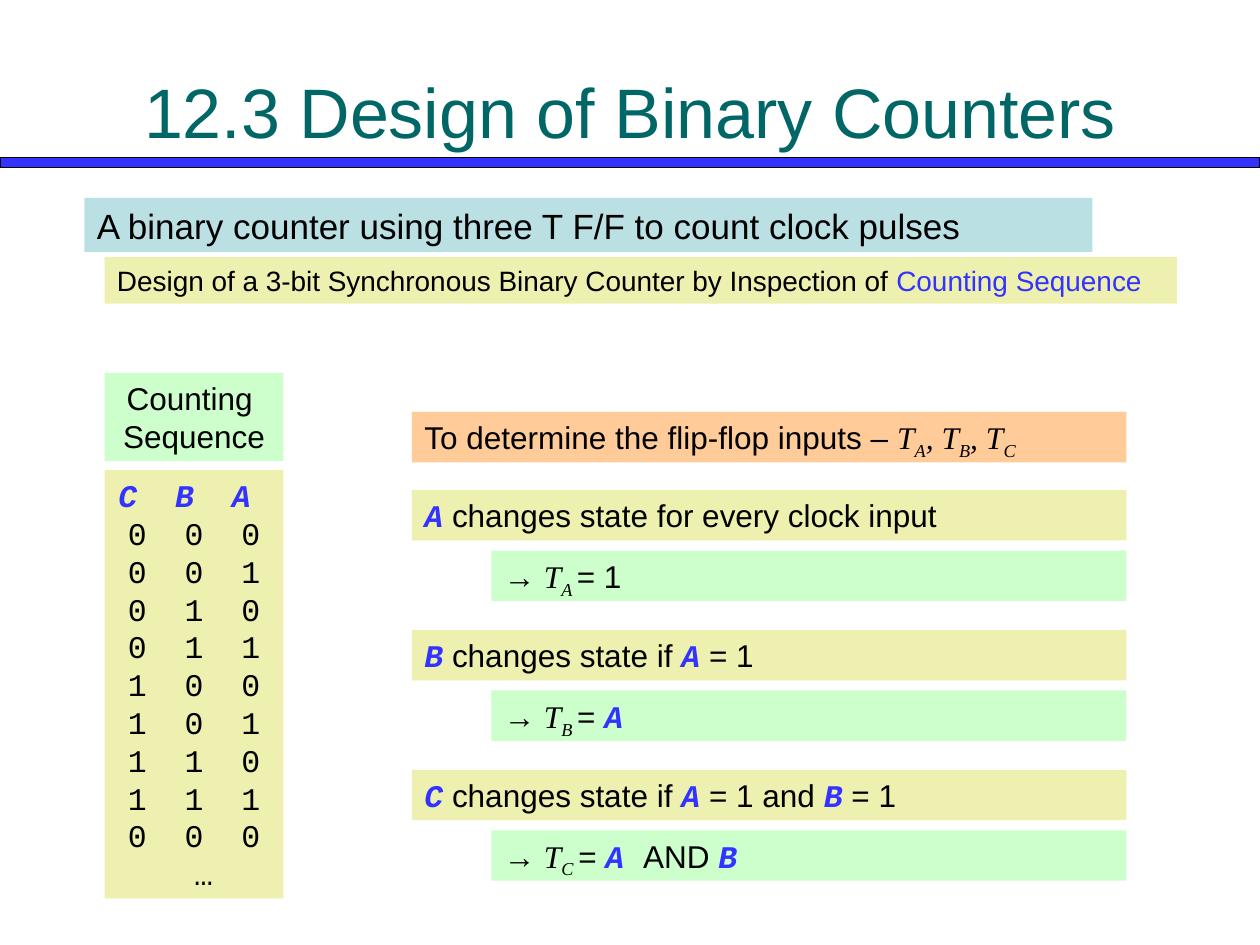
"""Build the slide on designing a 3-bit binary counter."""
from pptx import Presentation
from pptx.dml.color import RGBColor
from pptx.enum.shapes import MSO_SHAPE
from pptx.enum.text import MSO_ANCHOR, PP_ALIGN
from pptx.util import Inches, Pt

COLORS = {
    "black": "000000", "blue": "3333FF", "teal": "006666", "sky": "BBE0E3",
    "yellow": "EDF0AE", "green": "CCFFCC", "orange": "FFCC99",
}
STYLES = {
    "plain": {"name": "Arial"},
    "title": {"name": "Arial", "color": "teal"},
    "accent": {"name": "Arial", "color": "blue"},
    "state": {"name": "Courier New", "color": "blue", "bold": True, "italic": True},
    "state_wide": {"name": "Courier New", "color": "blue", "bold": True,
                   "italic": True, "spc": "540"},
    "bit": {"name": "Courier New"},
    "bit_wide": {"name": "Courier New", "spc": "540"},
    "math": {"name": "Times New Roman", "italic": True},
    "sub": {"name": "Times New Roman", "italic": True, "baseline": "-25000"},
}
XML_KEYS = ("spc", "baseline")
RULE_LEFT, RULE_TOP, RULE_STEP = 3.27, 3.89, 1.11
RESULT_LEFT, RESULT_DROP = 3.9, 0.48
RIGHT_EDGE, BOX_HEIGHT = 8.94, 0.4


def color(name):
    return RGBColor.from_string(COLORS[name])


def add_run(paragraph, style, text, size):
    run = paragraph.add_run()
    run.text = text
    run.font.size = Pt(size)
    values = {"color": "black", **STYLES[style]}
    run.font.color.rgb = color(values.pop("color"))
    for key, value in values.items():
        if key in XML_KEYS:
            run.font._element.set(key, value)
        else:
            setattr(run.font, key, value)


def write(shape, lines, size, align, anchor=MSO_ANCHOR.TOP):
    frame = shape.text_frame
    frame.word_wrap = True
    frame.vertical_anchor = anchor
    for index, runs in enumerate(lines):
        paragraph = frame.add_paragraph() if index else frame.paragraphs[0]
        paragraph.alignment = align
        for style, text in runs:
            add_run(paragraph, style, text, size)


def add_bar(slide, place, fill):
    shape = slide.shapes.add_shape(MSO_SHAPE.RECTANGLE, *map(Inches, place))
    shape.shadow.inherit = False
    shape.fill.solid()
    shape.fill.fore_color.rgb = color(fill)
    shape.line.fill.background()
    return shape


def add_box(slide, place, fill, lines, size=18, align=PP_ALIGN.LEFT):
    write(add_bar(slide, place, fill), lines, size, align)


def add_header(slide):
    bar = add_bar(slide, (0, 1.25, 10, 0.08), "blue")
    bar.line.color.rgb = color("black")
    bar.line.width = Pt(0.75)
    title = slide.shapes.add_textbox(*map(Inches, (0.5, 0.25, 9, 1.25)))
    write(title, [[("title", "12.3 Design of Binary Counters")]], 40,
          PP_ALIGN.CENTER, MSO_ANCHOR.MIDDLE)
    add_box(slide, (0.67, 1.57, 8, 0.43), "sky",
            [[("plain", "A binary counter using three T F/F to count clock pulses")]], 20)
    add_box(slide, (0.83, 2.04, 8.51, 0.37), "yellow",
            [[("plain", "Design of a 3-bit Synchronous Binary Counter by Inspection of "),
              ("accent", "Counting Sequence")]], 16)


def add_sequence(slide):
    rows = [[("state_wide", "C B "), ("state", "A ")]]
    for count in range(9):
        c, b, a = f"{count % 8:03b}"
        rows.append([("bit_wide", f"{c} {b} "), ("bit", a)])
    rows.append([("bit", " …")])
    add_box(slide, (0.83, 3.73, 1.42, 3.4), "yellow", rows, align=PP_ALIGN.CENTER)
    add_box(slide, (0.83, 2.96, 1.42, 0.7), "green",
            [[("plain", "Counting ")], [("plain", "Sequence")]], align=PP_ALIGN.CENTER)


def add_rules(slide):
    width = RIGHT_EDGE - RULE_LEFT
    add_box(slide, (RULE_LEFT, 3.27, width, BOX_HEIGHT), "orange",
            [[("plain", "To determine the flip-flop inputs – "),
              ("math", "T"), ("sub", "A"), ("math", ", T"), ("sub", "B"),
              ("math", ", T"), ("sub", "C")]])
    rules = [
        ("A", [("plain", " changes state for every clock input")], [("plain", "1")]),
        ("B", [("plain", " changes state if "), ("state", "A"), ("plain", " = 1")],
         [("state", "A")]),
        ("C", [("plain", " changes state if "), ("state", "A"), ("plain", " = 1 and "),
               ("state", "B"), ("plain", " = 1")],
         [("state", "A "), ("plain", "AND "), ("state", "B")]),
    ]
    for index, (name, condition, result) in enumerate(rules):
        top = RULE_TOP + index * RULE_STEP
        add_box(slide, (RULE_LEFT, top, width, BOX_HEIGHT), "yellow",
                [[("state", name), *condition]])
        add_box(slide, (RESULT_LEFT, top + RESULT_DROP, RIGHT_EDGE - RESULT_LEFT, BOX_HEIGHT),
                "green", [[("plain", "→ "), ("math", "T"), ("sub", f"{name} "),
                           ("plain", "= "), *result]])


def main():
    presentation = Presentation()
    presentation.slide_width = Inches(10)
    presentation.slide_height = Inches(7.5)
    slide = presentation.slides.add_slide(presentation.slide_layouts[6])
    add_header(slide)
    add_sequence(slide)
    add_rules(slide)
    presentation.save("out.pptx")


if __name__ == "__main__":
    main()
